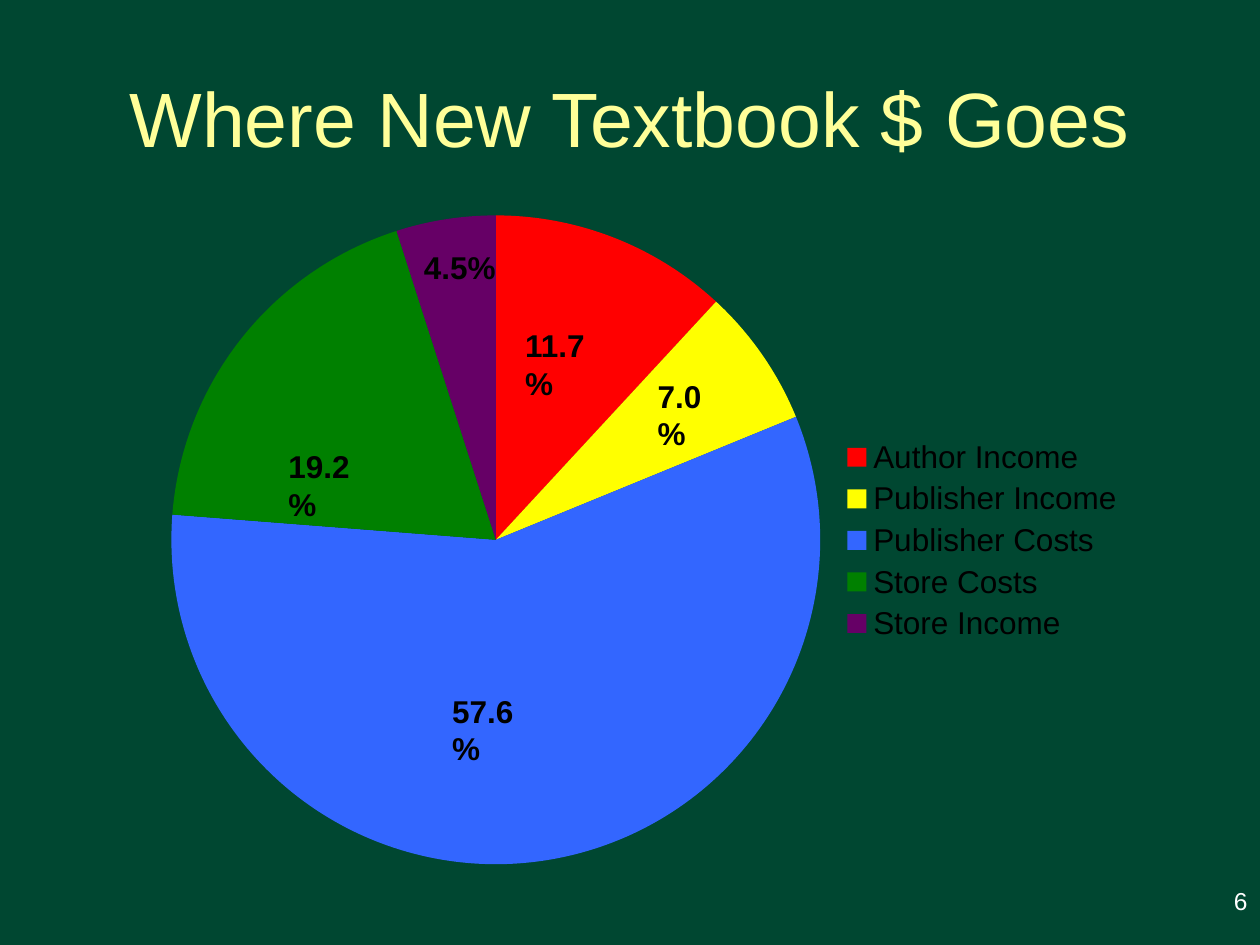
from lxml import etree
from pptx import Presentation
from pptx import util as u
from pptx.chart import data as cd
from pptx.dml.color import RGBColor
from pptx.enum import chart as ce, text as te
from pptx.oxml import ns

HUES = {
    "back": "004731", "title": "FFFF99", "page": "FFFFFF", "ink": "000000",
    "red": "FF0000", "yellow": "FFFF00", "blue": "3366FF",
    "green": "008000", "purple": "660066",
}
PARTS = [
    ("Author Income", 12, "red", "11.7%", (4.07, 2.54, 0.84, 0.4), "left"),
    ("Publisher Income", 7, "yellow", "7.0%", (5.12, 2.94, 0.71, 0.4), "left"),
    ("Publisher Costs", 58, "blue", "57.6%", (3.49, 5.44, 0.84, 0.4), "left"),
    ("Store Costs", 19, "green", "19.2%", (2.19, 3.5, 0.84, 0.4), "left"),
    ("Store Income", 5, "purple", "4.5%", (3, 1.92, 1.3, 0.4), "center"),
]
ALIGN = {
    "left": te.PP_ALIGN.LEFT,
    "center": te.PP_ALIGN.CENTER,
    "right": te.PP_ALIGN.RIGHT,
}


def hue(name):
    return RGBColor.from_string(HUES[name])


def inch(box):
    return [u.Inches(n) for n in box]


def write(slide, box, words, size=18, color="ink", bold=False,
          align="left", anchor=te.MSO_ANCHOR.TOP):
    frame = slide.shapes.add_textbox(*inch(box)).text_frame
    frame.word_wrap = True
    frame.vertical_anchor = anchor
    para = frame.paragraphs[0]
    para.alignment = ALIGN[align]
    run = para.add_run()
    run.text = words
    font = run.font
    font.name, font.size, font.bold = "Arial", u.Pt(size), bold
    font.color.rgb = hue(color)


def lay_out(node, index, outer, inner, **modes):
    for old in node.findall(ns.qn("c:layout")):
        node.remove(old)
    left, top, width, height = outer
    x, y, w, h = inner
    spots = dict(modes, xMode="edge", yMode="edge",
                 x=(x - left) / width, y=(y - top) / height,
                 w=w / width, h=h / height)
    layout = etree.Element(ns.qn("c:layout"))
    manual = etree.SubElement(layout, ns.qn("c:manualLayout"))
    for tag, val in spots.items():
        etree.SubElement(manual, ns.qn("c:" + tag)).set("val", str(val))
    node.insert(index, layout)


def add_pie(slide, box):
    data = cd.CategoryChartData()
    data.categories = [part[0] for part in PARTS]
    data.add_series("Series 1", [part[1] for part in PARTS])
    chart = slide.shapes.add_chart(
        ce.XL_CHART_TYPE.PIE, *inch(box), data).chart
    chart.has_title = False
    chart.font.name, chart.font.size = "Arial", u.Pt(18)
    chart.font.color.rgb = hue("ink")
    chart.has_legend = True
    legend = chart.legend
    legend.position = ce.XL_LEGEND_POSITION.RIGHT
    legend.include_in_layout = False
    plot = chart.plots[0]
    plot.vary_by_categories = True
    for i, part in enumerate(PARTS):
        look = plot.series[0].points[i].format
        look.fill.solid()
        look.fill.fore_color.rgb = hue(part[2])
        look.line.fill.background()
    area = chart.element.find(".//" + ns.qn("c:plotArea"))
    lay_out(area, 0, box, (1.36, 1.71, 5.15, 5.15), layoutTarget="inner")
    key = chart.element.find(".//" + ns.qn("c:legend"))
    lay_out(key, 1, box, (6.7, 3.44, 2.19, 1.7))
    for _, _, _, share, spot, align in PARTS:
        write(slide, spot, share, bold=True, align=align)


def add_title(slide, box):
    write(slide, box, "Where New Textbook $ Goes", size=44, color="title",
          align="center", anchor=te.MSO_ANCHOR.MIDDLE)


def add_page(slide, box):
    write(slide, box, "6", size=14, color="page", align="right")


def main():
    deck = Presentation()
    deck.slide_width, deck.slide_height = inch((10, 7.5))
    slide = deck.slides.add_slide(deck.slide_layouts[6])
    fill = slide.background.fill
    fill.solid()
    fill.fore_color.rgb = hue("back")
    add_title(slide, (0.5, 0.3, 9, 1.25))
    add_page(slide, (7.67, 6.98, 2.33, 0.52))
    add_pie(slide, (1.22, 1.55, 7.82, 5.48))
    deck.save("out.pptx")


if __name__ == "__main__":
    main()
